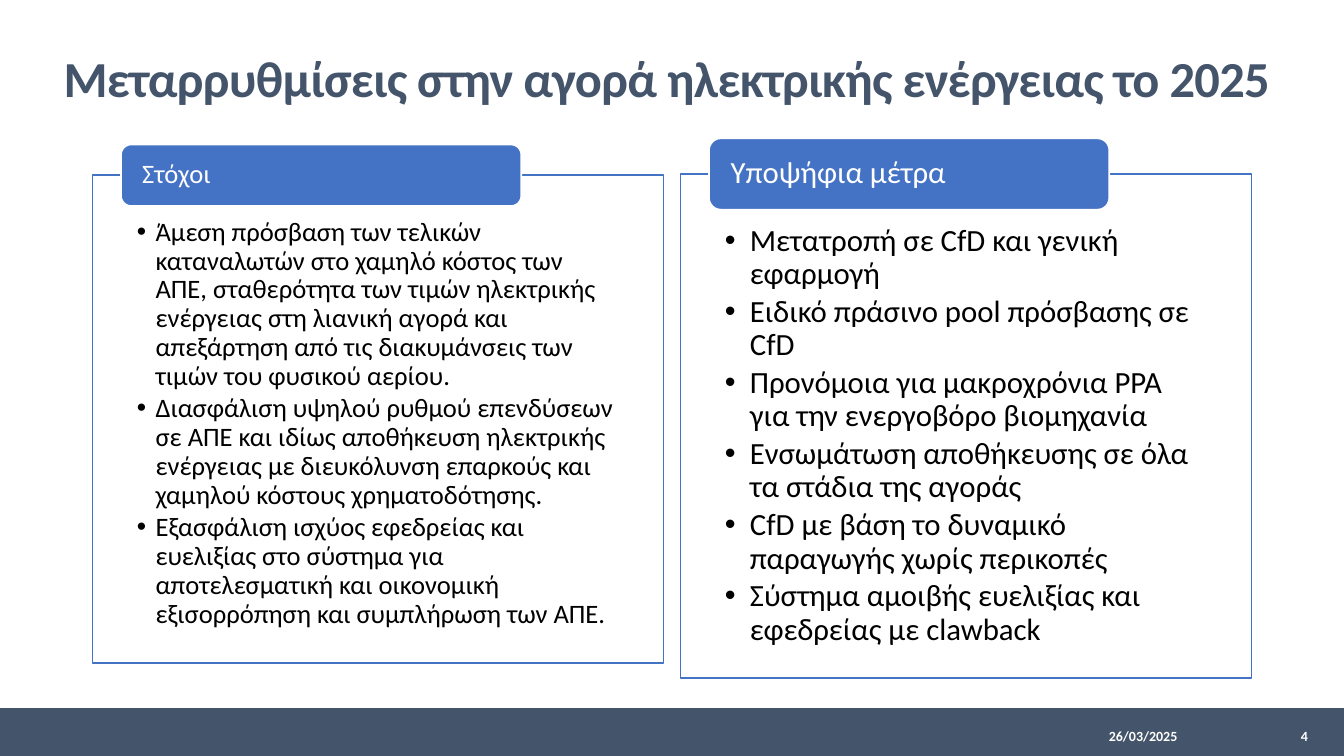
"""Build the slide on electricity market reforms with two titled list panels."""
from dataclasses import dataclass

from pptx import Presentation
from pptx.dml.color import RGBColor
from pptx.enum.shapes import MSO_SHAPE
from pptx.enum.text import MSO_ANCHOR, MSO_AUTO_SIZE, PP_ALIGN
from pptx.oxml.ns import qn
from pptx.shapes.autoshape import Shape
from pptx.slide import Slide
from pptx.text.text import TextFrame, _Paragraph
from pptx.util import Pt

SLATE = RGBColor(0x44, 0x54, 0x6A)
BLUE = RGBColor(0x44, 0x72, 0xC4)
WHITE = RGBColor(0xFF, 0xFF, 0xFF)
BLACK = RGBColor(0, 0, 0)
FACE = "Calibri"
EDGE = 1.25


@dataclass(frozen=True)
class Box:
    left: float
    top: float
    width: float
    height: float


@dataclass(frozen=True)
class Panel:
    head: str
    items: tuple[str, ...]
    frame: Box
    tab: Box
    size: float
    inset: float
    indent: float


@dataclass(frozen=True)
class Label:
    text: str
    box: Box


PANELS = (
    Panel(
        "Στόχοι",
        (
            "Άμεση πρόσβαση των τελικών καταναλωτών στο χαμηλό κόστος των ΑΠΕ, "
            "σταθερότητα των τιμών ηλεκτρικής ενέργειας στη λιανική αγορά και "
            "απεξάρτηση από τις διακυμάνσεις των τιμών του φυσικού αερίου.",
            "Διασφάλιση υψηλού ρυθμού επενδύσεων σε ΑΠΕ και ιδίως αποθήκευση "
            "ηλεκτρικής ενέργειας με διευκόλυνση επαρκούς και χαμηλού κόστους "
            "χρηματοδότησης.",
            "Εξασφάλιση ισχύος εφεδρείας και ευελιξίας στο σύστημα για "
            "αποτελεσματική και οικονομική εξισορρόπηση και συμπλήρωση των ΑΠΕ.",
        ),
        Box(66, 125, 408, 348.5), Box(86.4, 103.2, 286, 44), 19, 31, 13.5,
    ),
    Panel(
        "Υποψήφια μέτρα",
        (
            "Μετατροπή σε CfD και γενική εφαρμογή",
            "Ειδικό πράσινο pool πρόσβασης σε CfD",
            "Προνόμοια για μακροχρόνια PPA για την ενεργοβόρο βιομηχανία",
            "Ενσωμάτωση αποθήκευσης σε όλα τα στάδια της αγοράς",
            "CfD με βάση το δυναμικό παραγωγής χωρίς περικοπές",
            "Σύστημα αμοιβής ευελιξίας και εφεδρείας με clawback",
        ),
        Box(486, 124.5, 408, 360), Box(506.4, 98.8, 286, 51), 22, 36, 18,
    ),
)
LABELS = (
    Label("26/03/2025", Box(719.3, 511.2, 194.4, 28.8)),
    Label("4", Box(913.7, 511.2, 36, 28.8)),
)


def place(shape: Shape, box: Box) -> None:
    shape.left, shape.top = Pt(box.left), Pt(box.top)
    shape.width, shape.height = Pt(box.width), Pt(box.height)


def paint(shape: Shape, fill: RGBColor, line: RGBColor) -> None:
    shape.fill.solid()
    shape.fill.fore_color.rgb = fill
    shape.line.color.rgb = line
    shape.line.width = Pt(EDGE)


def style(par: _Paragraph, size: float, color: RGBColor, bold: bool = False) -> None:
    par.font.name = FACE
    par.font.size = Pt(size)
    par.font.bold = bold
    par.font.color.rgb = color


def setup(frame: TextFrame, anchor: MSO_ANCHOR) -> None:
    frame.word_wrap = True
    frame.auto_size = MSO_AUTO_SIZE.NONE
    frame.vertical_anchor = anchor


def add_block(slide: Slide, kind: MSO_SHAPE, box: Box, fill: RGBColor, line: RGBColor) -> Shape:
    shape = slide.shapes.add_shape(
        kind, Pt(box.left), Pt(box.top), Pt(box.width), Pt(box.height))
    shape.shadow.inherit = False
    paint(shape, fill, line)
    return shape


def set_title(slide: Slide, text: str) -> None:
    title = slide.shapes.title
    place(title, Box(38.2, 20.2, 896.4, 60.5))
    title.text_frame.text = text
    setup(title.text_frame, MSO_ANCHOR.BOTTOM)
    par = title.text_frame.paragraphs[0]
    par.alignment = PP_ALIGN.LEFT
    par.line_spacing = 0.85
    style(par, 36, SLATE, True)
    par._p.pPr.find(qn("a:defRPr")).set("spc", "-50")


def add_panel(slide: Slide, body: Shape, panel: Panel) -> None:
    place(body, panel.frame)
    paint(body, WHITE, BLUE)
    frame = body.text_frame
    frame.text = "\n".join(panel.items)
    setup(frame, MSO_ANCHOR.TOP)
    frame.margin_left = frame.margin_right = Pt(31.7)
    frame.margin_top, frame.margin_bottom = Pt(panel.inset), Pt(11)
    for par in frame.paragraphs:
        style(par, panel.size, BLACK)
        par.line_spacing = 0.9
        par.space_before = Pt(0)
        par.space_after = Pt(round(panel.size * 0.15, 1))
        par._p.pPr.set("marL", str(Pt(panel.indent)))
        par._p.pPr.set("indent", str(-Pt(panel.indent)))

    tab = add_block(slide, MSO_SHAPE.ROUNDED_RECTANGLE, panel.tab, BLUE, WHITE)
    frame = tab.text_frame
    frame.text = panel.head
    setup(frame, MSO_ANCHOR.MIDDLE)
    frame.margin_left = frame.margin_right = Pt(13)
    frame.margin_top = frame.margin_bottom = Pt(0)
    par = frame.paragraphs[0]
    par.alignment = PP_ALIGN.LEFT
    par.line_spacing = 0.9
    style(par, panel.size, WHITE)


def add_label(slide: Slide, label: Label) -> None:
    box = label.box
    text = slide.shapes.add_textbox(
        Pt(box.left), Pt(box.top), Pt(box.width), Pt(box.height))
    text.text_frame.text = label.text
    setup(text.text_frame, MSO_ANCHOR.MIDDLE)
    par = text.text_frame.paragraphs[0]
    par.alignment = PP_ALIGN.CENTER
    style(par, 10, WHITE, True)


def main() -> None:
    deck = Presentation()
    deck.slide_width, deck.slide_height = Pt(960), Pt(540)
    slide = deck.slides.add_slide(deck.slide_layouts[3])
    set_title(slide, "Μεταρρυθμίσεις στην αγορά ηλεκτρικής ενέργειας το 2025")
    add_block(slide, MSO_SHAPE.RECTANGLE, Box(0, 506, 960, 34), SLATE, SLATE)
    for index, panel in enumerate(PANELS, start=1):
        add_panel(slide, slide.placeholders[index], panel)
    for label in LABELS:
        add_label(slide, label)
    deck.save("out.pptx")


if __name__ == "__main__":
    main()
